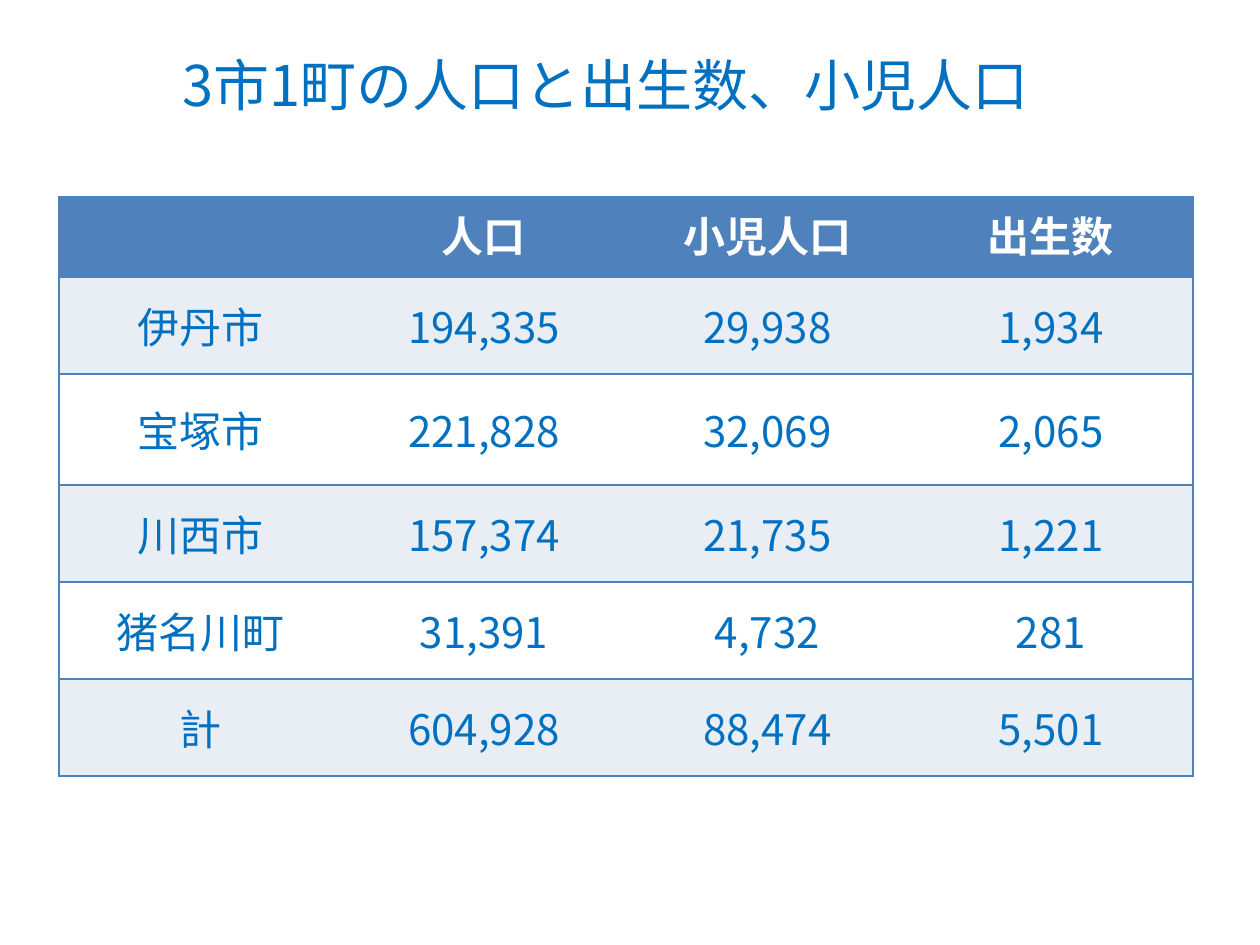
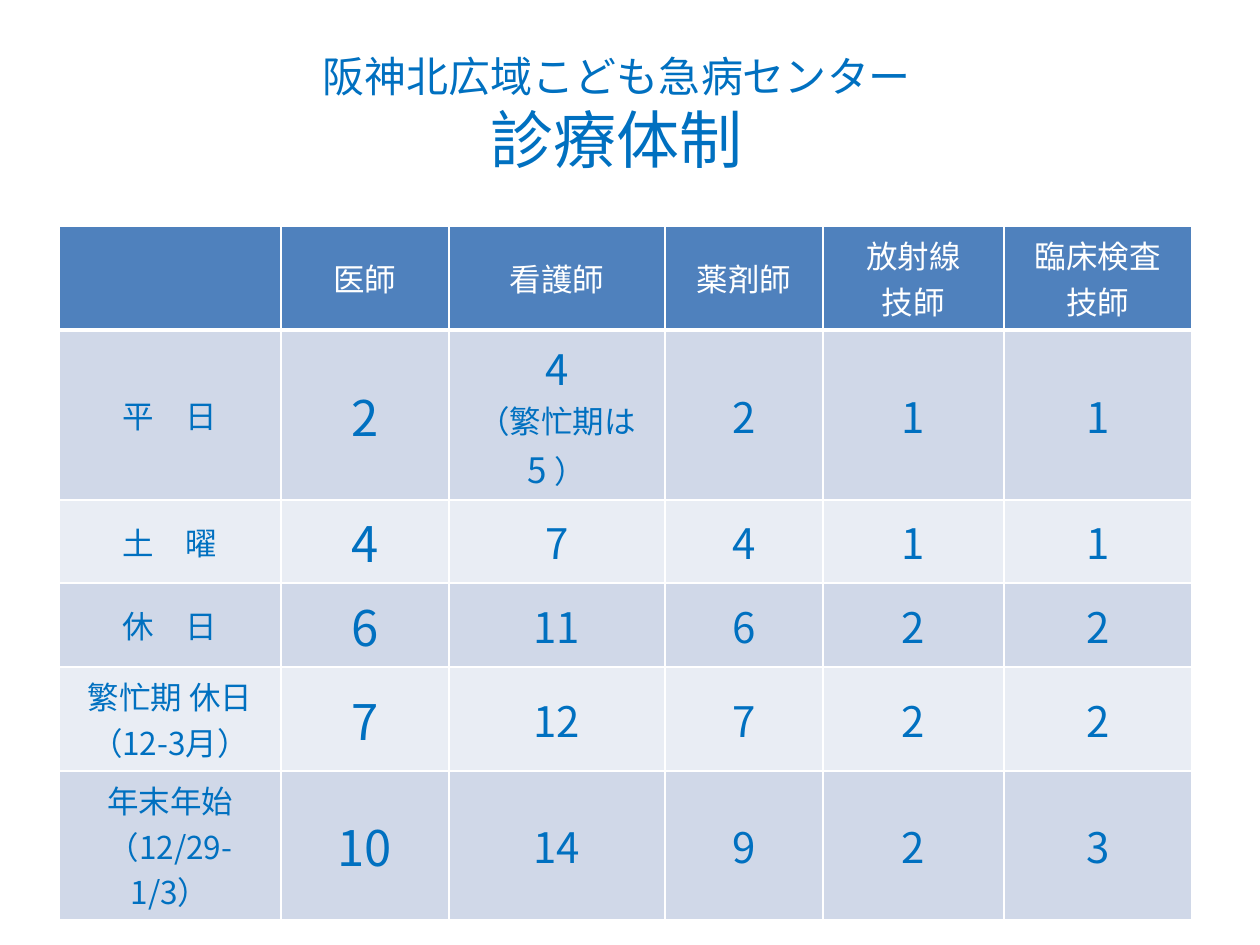
from lxml.etree import SubElement as Sub
from pptx import Presentation
from pptx.dml.color import RGBColor as RGB
from pptx.enum.text import MSO_ANCHOR as Anchor, PP_ALIGN as Align
from pptx.oxml.ns import qn
from pptx.util import Pt

PX = 914400 / 126
FONT = "Noto Sans CJK JP"
HUES = {"text": "0070C0", "head": "4F81BD", "pale": "E9EDF4",
        "band": "D0D8E8", "white": "FFFFFF"}


def write(frame, lines, hue, bold=False):
    for i, line in enumerate(lines):
        para = frame.paragraphs[0] if i == 0 else frame.add_paragraph()
        para.alignment = Align.CENTER
        for text, size in line:
            if text == "\n":
                para.add_line_break()
                continue
            run = para.add_run()
            run.text = text
            font = run.font
            font.size, font.bold, font.name = Pt(size), bold, FONT
            font.color.rgb = RGB.from_string(HUES[hue])
            Sub(run._r.get_or_add_rPr(), qn("a:ea"), typeface=FONT)


def edge(cell, side, hue, width):
    line = Sub(cell._tc.get_or_add_tcPr(), qn("a:ln" + side), w=str(Pt(width)))
    if width:
        fill = Sub(line, qn("a:solidFill"))
        Sub(fill, qn("a:srgbClr"), val=HUES[hue])
    else:
        Sub(line, qn("a:noFill"))


pages = [
    {
        "title": [("3市1町の人口と出生数、小児人口", 32)],
        "box": (39, 0, 1134, 168),
        "top": 197,
        "cols": [283, 284, 283, 284],
        "rows": [80, 97, 111, 97, 97, 97],
        "sizes": [24] * 4,
        "head": 24,
        "bold": True,
        "anchor": Anchor.TOP,
        "bands": ["pale", "white"],
        "line": "head",
        "grid": 0,
        "rule": 1,
        "cells": [
            ["", "人口", "小児人口", "出生数"],
            ["伊丹市", "194,335", "29,938", "1,934"],
            ["宝塚市", "221,828", "32,069", "2,065"],
            ["川西市", "157,374", "21,735", "1,221"],
            ["猪名川町", "31,391", "4,732", "281"],
            ["計", "604,928", "88,474", "5,501"],
        ],
    },
    {
        "title": [("阪神北広域こども急病センター", 24), ("\n", 24), ("診療体制", 36)],
        "box": (50, 39, 1134, 149),
        "top": 226,
        "cols": [222, 168, 216, 158, 181, 188],
        "rows": [104, 170, 83, 84, 104, 149],
        "sizes": [18, 28, 24, 24, 24, 24],
        "head": 18,
        "bold": False,
        "anchor": Anchor.MIDDLE,
        "bands": ["band", "pale"],
        "line": "white",
        "grid": 1,
        "rule": 3,
        "cells": [
            ["", "医師", "看護師", "薬剤師", "放射線\n技師", "臨床検査\n技師"],
            ["平　日", "2",
             [[("4", 24)], [("（繁忙期は", 18), ("5", 20), (" ）", 18)]],
             "2", "1", "1"],
            ["土　曜", "4", "7", "4", "1", "1"],
            ["休　日", "6", "11", "6", "2", "2"],
            ["繁忙期 休日\n（12-3月）", "7", "12", "7", "2", "2"],
            ["年末年始\n（12/29-1/3）", "10", "14", "9", "2", "3"],
        ],
    },
]

deck = Presentation()
deck.slide_width, deck.slide_height = int(1260 * PX), int(945 * PX)

for page in pages:
    slide = deck.slides.add_slide(deck.slide_layouts[6])
    title = slide.shapes.add_textbox(*[int(n * PX) for n in page["box"]]).text_frame
    title.word_wrap = True
    title.vertical_anchor = Anchor.MIDDLE
    write(title, [page["title"]], "text")

    cols, rows = page["cols"], page["rows"]
    area = [int(n * PX) for n in (59, page["top"], sum(cols), sum(rows))]
    table = slide.shapes.add_table(len(rows), len(cols), *area).table
    table.first_row = table.horz_banding = False
    for col, width in zip(table.columns, cols):
        col.width = int(width * PX)
    for row, height in zip(table.rows, rows):
        row.height = int(height * PX)

    for r, texts in enumerate(page["cells"]):
        for c, text in enumerate(texts):
            cell = table.cell(r, c)
            head = r == 0
            edge(cell, "L", page["line"], 1 if c == 0 else page["grid"])
            edge(cell, "R", page["line"], 1 if c == len(cols) - 1 else page["grid"])
            edge(cell, "T", page["line"], page["rule"] if r == 1 else 1)
            edge(cell, "B", page["line"], page["rule"] if head else 1)
            fill = "head" if head else page["bands"][(r - 1) % 2]
            cell.fill.solid()
            cell.fill.fore_color.rgb = RGB.from_string(HUES[fill])
            cell.vertical_anchor = page["anchor"] if head else Anchor.MIDDLE
            if not text:
                continue
            if isinstance(text, str):
                size = page["head"] if head else page["sizes"][c]
                text = [[(part, size)] for part in text.split("\n")]
            write(cell.text_frame, text, "white" if head else "text",
                  head and page["bold"])

deck.save("out.pptx")
